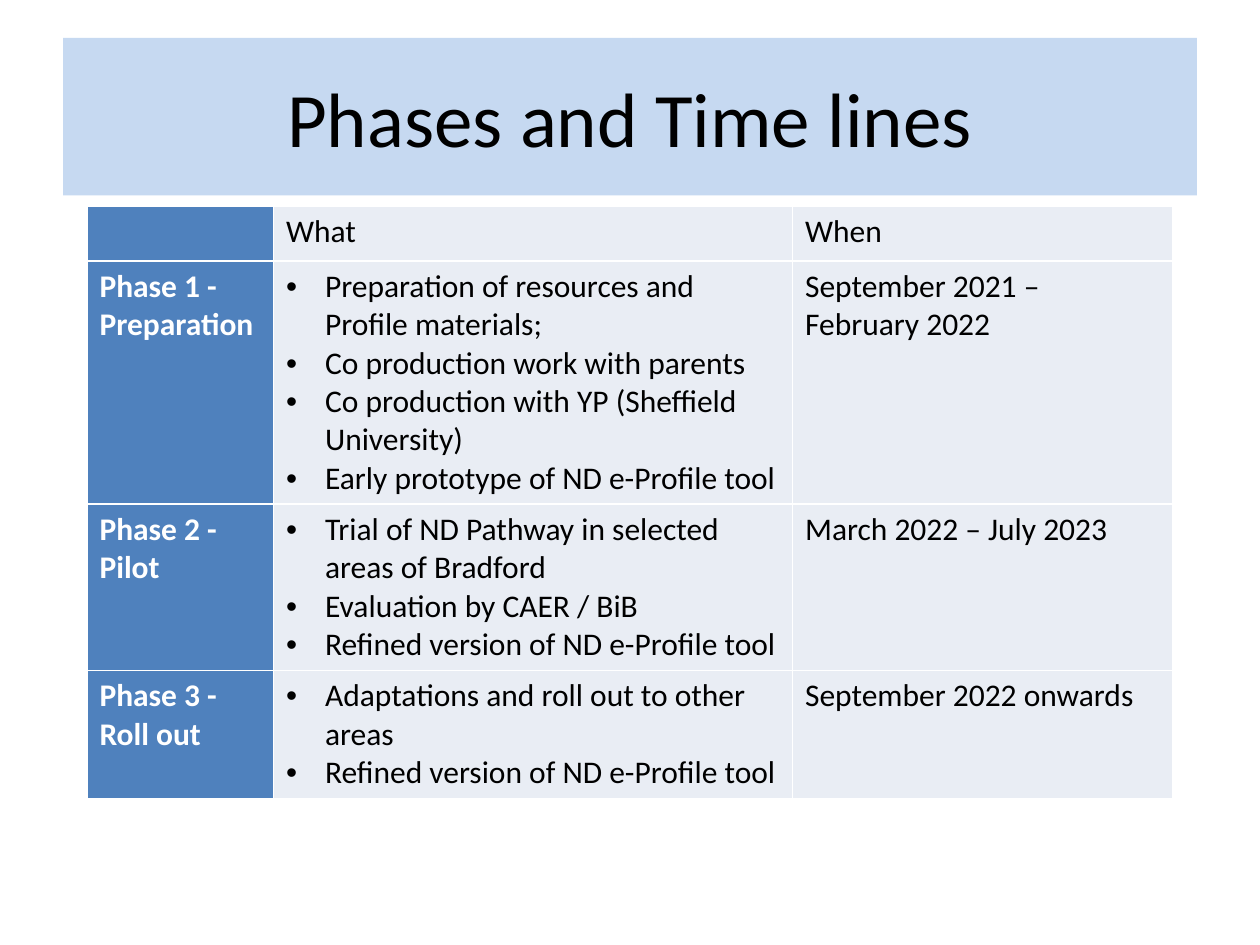
from dataclasses import dataclass

from lxml.etree import SubElement
from pptx import Presentation
from pptx.dml.color import RGBColor as RGB
from pptx.enum.text import MSO_ANCHOR as Anchor, PP_ALIGN as Align
from pptx.oxml.ns import qn
from pptx.util import Inches, Pt


@dataclass(frozen=True)
class Theme:
    font: str = "Calibri"
    title_size: int = 44
    body_size: int = 18
    text: str = "000000"
    white: str = "FFFFFF"
    banner: str = "C6D9F1"
    label: str = "4F81BD"
    cell: str = "E9EDF4"
    border_pt: int = 1


THEME = Theme()

TITLE = "Phases and Time lines"
HEADERS = ["What", "When"]
PHASES = [
    (["Phase 1 -", "Preparation"],
     ["Preparation of resources and Profile materials;",
      "Co production work with parents",
      "Co production with YP (Sheffield University)",
      "Early prototype of ND e-Profile tool"],
     "September 2021 – February 2022"),
    (["Phase 2 -", "Pilot"],
     ["Trial of ND Pathway in selected areas of Bradford",
      "Evaluation by CAER / BiB",
      "Refined version of ND e-Profile tool"],
     "March 2022 – July 2023"),
    (["Phase 3 -", "Roll out"],
     ["Adaptations and roll out to other areas",
      "Refined version of ND e-Profile tool"],
     "September 2022 onwards"),
]

TITLE_BOX = (0.5, 0.3, 9, 1.25)
TABLE_AT = (0.69, 1.64)
COLUMNS = [1.48, 4.12, 3.02]
ROWS = [0.43, 1.93, 1.32, 1.01]
BULLET_INDENT = 0.31


def add_run(p, text, size, color, bold=False):
    r = p.add_run()
    r.text = text
    r.font.name = THEME.font
    r.font.size = Pt(size)
    r.font.bold = bold
    r.font.color.rgb = RGB.from_string(color)


def add_bullet(p):
    pPr = p._p.get_or_add_pPr()
    pPr.set("marL", str(Inches(BULLET_INDENT)))
    pPr.set("indent", str(-Inches(BULLET_INDENT)))
    SubElement(pPr, qn("a:buFont"), typeface="Arial")
    SubElement(pPr, qn("a:buChar"), char="•")


def add_borders(cell):
    tcPr = cell._tc.get_or_add_tcPr()
    for side in ("lnL", "lnR", "lnT", "lnB"):
        ln = SubElement(tcPr, qn(f"a:{side}"), w=str(Pt(THEME.border_pt)))
        fill = SubElement(ln, qn("a:solidFill"))
        SubElement(fill, qn("a:srgbClr"), val=THEME.white)


def fill_cell(cell, lines, label=False, bullets=False):
    add_borders(cell)
    cell.fill.solid()
    cell.fill.fore_color.rgb = RGB.from_string(THEME.label if label else THEME.cell)
    tf = cell.text_frame
    for i, line in enumerate(lines):
        p = tf.add_paragraph() if i else tf.paragraphs[0]
        if bullets:
            add_bullet(p)
        add_run(p, line, THEME.body_size, THEME.white if label else THEME.text, label)


def add_title(s):
    sp = s.shapes.title
    sp.left, sp.top, sp.width, sp.height = map(Inches, TITLE_BOX)
    sp.fill.solid()
    sp.fill.fore_color.rgb = RGB.from_string(THEME.banner)
    tf = sp.text_frame
    tf.vertical_anchor = Anchor.MIDDLE
    p = tf.paragraphs[0]
    p.alignment = Align.CENTER
    add_run(p, TITLE, THEME.title_size, THEME.text)


def add_phase_table(s):
    box = map(Inches, (*TABLE_AT, sum(COLUMNS), sum(ROWS)))
    table = s.shapes.add_table(len(ROWS), len(COLUMNS), *box).table
    table.first_row = table.horz_banding = False
    for column, width in zip(table.columns, COLUMNS):
        column.width = Inches(width)
    for row, height in zip(table.rows, ROWS):
        row.height = Inches(height)

    fill_cell(table.cell(0, 0), [], label=True)
    for col, header in enumerate(HEADERS, 1):
        fill_cell(table.cell(0, col), [header])
    for row, (name, what, when) in enumerate(PHASES, 1):
        fill_cell(table.cell(row, 0), name, label=True)
        fill_cell(table.cell(row, 1), what, bullets=True)
        fill_cell(table.cell(row, 2), [when])


def main():
    prs = Presentation()
    prs.slide_width, prs.slide_height = Inches(10), Inches(7.5)
    s = prs.slides.add_slide(prs.slide_layouts[5])
    add_title(s)
    add_phase_table(s)
    prs.save("out.pptx")


if __name__ == "__main__":
    main()
